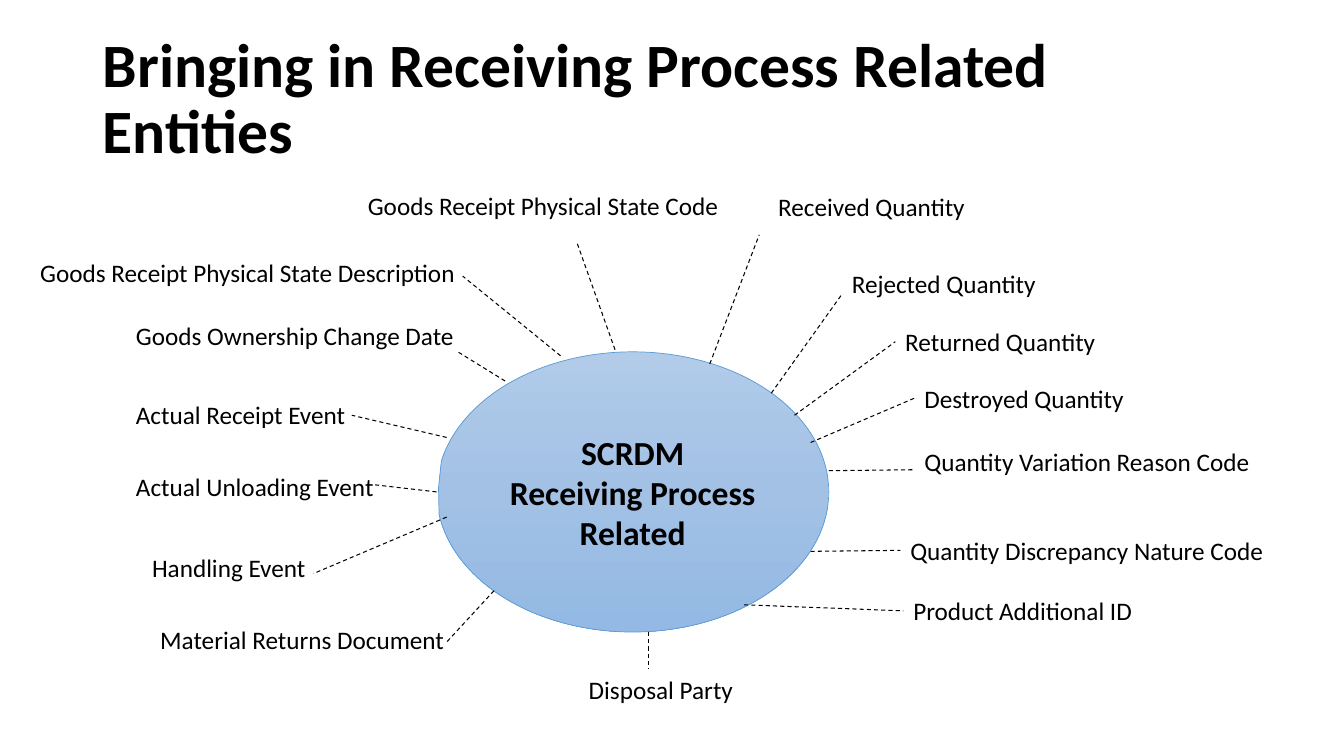
"""Build the slide that maps receiving process entities around a central ellipse."""
import copy

import pptx
import pptx.dml.color
import pptx.enum.dml
import pptx.enum.shapes
import pptx.enum.text
import pptx.oxml.ns
import pptx.util
from lxml import etree

Inches = pptx.util.Inches
Pt = pptx.util.Pt

TITLE = "Bringing in Receiving Process Related Entities"
TITLE_AREA = (0.92, 0.4, 11.5, 1.2)
HUB_LINES = ["SCRDM", "Receiving Process", "Related"]
HUB_AREA = (4.33, 3.49, 3.89, 2.78)
HUB_TAIL = (-0.495, -0.016)
LABEL_HEIGHT = 0.4
LEFT_SIDE = 1

# label, (left, top, width), hub end of the line, label end (None: middle of the label's left side)
ENTITIES = [
    ("Goods Receipt Physical State Code", (3.55, 1.84, 4.49), (6.1, 3.47), (5.72, 2.4)),
    ("Received Quantity", (7.62, 1.85, 2.08), (7.04, 3.61), (7.53, 2.33)),
    ("Rejected Quantity", (8.35, 2.61, 2.05), (7.65, 3.9), (8.35, 2.92)),
    ("Returned Quantity", (8.88, 3.19, 2.11), (7.88, 4.12), None),
    ("Destroyed Quantity", (9.07, 3.75, 2.2), (8.04, 4.39), None),
    ("Quantity Variation Reason Code", (9.07, 4.38, 3.47), (8.22, 4.67), (9.07, 4.66)),
    ("Quantity Discrepancy Nature Code", (8.93, 5.26, 3.75), (8.04, 5.47), None),
    ("Product Additional ID", (8.96, 5.86, 2.4), (7.38, 6), None),
    ("Disposal Party", (5.74, 6.64, 1.65), (6.43, 6.27), (6.43, 6.64)),
    ("Material Returns Document", (1.49, 6.14, 3.05), (4.9, 5.86), (4.43, 6.37)),
    ("Handling Event", (1.41, 5.43, 1.74), (4.43, 5.13), (3.11, 5.69)),
    ("Actual Unloading Event", (1.25, 4.63, 2.59), (4.33, 4.88), (3.72, 4.81)),
    ("Actual Receipt Event", (1.25, 3.91, 2.3), (4.43, 4.34), (3.49, 4.12)),
    ("Goods Ownership Change Date", (1.25, 3.13, 3.52), (5.01, 3.78), (4.54, 3.49)),
    ("Goods Receipt Physical State Description", (0.3, 2.5, 4.49), (5.56, 3.53), (4.59, 2.74)),
]

THEME = {
    "font": "Calibri",
    "text": "000000",
    "hub_gradient": [(0, "B1CBE9"), (0.5, "A3C1E5"), (1, "93B9E4")],
    "hub_line": "5B9BD5",
    "title_size": 44,
    "hub_size": 24,
    "label_size": 18,
    "hub_line_width": 0.5,
    "spoke_width": 0.75,
}


def color(name):
    return pptx.dml.color.RGBColor.from_string(THEME[name])


def style_paragraph(para, size, bold=False):
    para.font.name = THEME["font"]
    para.font.size = Pt(THEME[size])
    para.font.bold = bold
    para.font.color.rgb = color("text")


def add_text(page, text, area, size, bold=False, wrap=True):
    box = page.shapes.add_textbox(*map(Inches, area))
    box.text_frame.word_wrap = wrap
    para = box.text_frame.paragraphs[0]
    para.text = text
    style_paragraph(para, size, bold)
    return box


def add_title(page):
    box = add_text(page, TITLE, TITLE_AREA, "title_size", bold=True)
    box.text_frame.vertical_anchor = pptx.enum.text.MSO_ANCHOR.MIDDLE
    box.text_frame.paragraphs[0].line_spacing = 0.9


def add_hub(page):
    hub = page.shapes.add_shape(
        pptx.enum.shapes.MSO_SHAPE.OVAL_CALLOUT, *map(Inches, HUB_AREA))
    hub.shadow.inherit = False
    for index, offset in enumerate(HUB_TAIL):
        hub.adjustments[index] = offset
    hub.fill.gradient()
    hub.fill.gradient_angle = 270
    stop_list = hub._element.spPr.find(".//" + pptx.oxml.ns.qn("a:gsLst"))
    stop_list.insert(1, copy.deepcopy(stop_list[0]))
    for stop, (position, shade) in zip(hub.fill.gradient_stops, THEME["hub_gradient"]):
        stop.position = position
        stop.color.rgb = pptx.dml.color.RGBColor.from_string(shade)
    hub.line.color.rgb = color("hub_line")
    hub.line.width = Pt(THEME["hub_line_width"])
    frame = hub.text_frame
    frame.word_wrap = True
    frame.vertical_anchor = pptx.enum.text.MSO_ANCHOR.MIDDLE
    frame.text = "\n".join(HUB_LINES)
    for para in frame.paragraphs:
        para.alignment = pptx.enum.text.PP_ALIGN.CENTER
        style_paragraph(para, "hub_size", bold=True)


def add_entity(page, text, place, hub_end, label_end):
    label = add_text(page, text, (*place, LABEL_HEIGHT), "label_size", wrap=False)
    target = label_end or (place[0], place[1] + LABEL_HEIGHT / 2)
    spoke = page.shapes.add_connector(
        pptx.enum.shapes.MSO_CONNECTOR.STRAIGHT, *map(Inches, (*hub_end, *target)))
    if label_end is None:
        spoke.end_connect(label, LEFT_SIDE)
    spoke.line.color.rgb = color("text")
    spoke.line.width = Pt(THEME["spoke_width"])
    spoke.line.dash_style = pptx.enum.dml.MSO_LINE.DASH
    etree.SubElement(spoke._element.spPr, pptx.oxml.ns.qn("a:effectLst"))


def main():
    deck = pptx.Presentation()
    deck.slide_width, deck.slide_height = Inches(13.33), Inches(7.5)
    page = deck.slides.add_slide(deck.slide_layouts[6])
    add_title(page)
    add_hub(page)
    for entity in ENTITIES:
        add_entity(page, *entity)
    deck.save("out.pptx")


if __name__ == "__main__":
    main()
